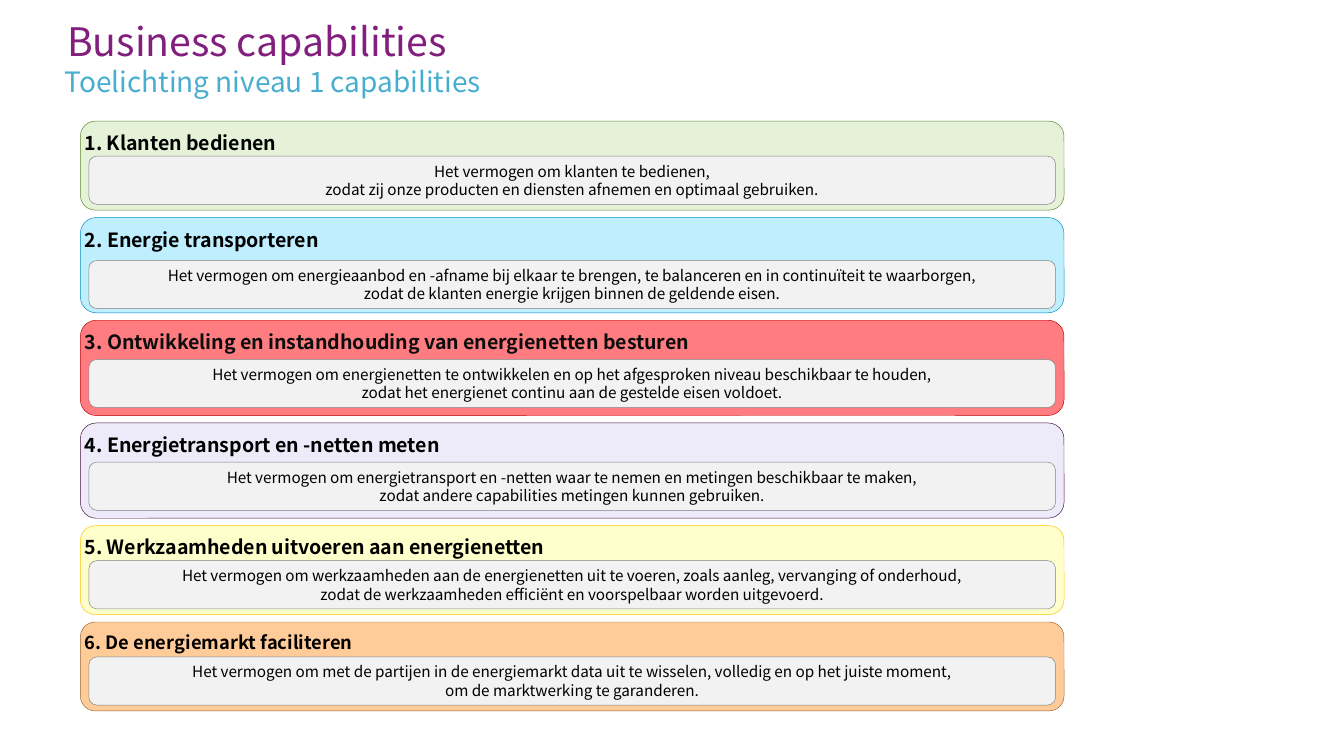
"""Build the slide that explains the level 1 business capabilities."""
import pptx
import pptx.dml.color
import pptx.enum.shapes
import pptx.enum.text
import pptx.util

Cm, Pt = pptx.util.Cm, pptx.util.Pt
RGBColor = pptx.dml.color.RGBColor
Align, Anchor = pptx.enum.text.PP_ALIGN, pptx.enum.text.MSO_ANCHOR

BLACK, INK = RGBColor(0x00, 0x00, 0x00), RGBColor(0x0D, 0x0D, 0x0D)
PURPLE, BLUE = RGBColor(0x82, 0x1E, 0x7D), RGBColor(0x48, 0xAE, 0xD0)
PALE, GREY = RGBColor(0xF2, 0xF2, 0xF2), RGBColor(0x80, 0x80, 0x80)
FONT = "Noto Sans CJK TC"

TITLE = "Business capabilities"
SUBTITLE = "Toelichting niveau 1 capabilities"
BANDS = [
    {"head": "1. Klanten bedienen", "size": 10.5, "ink": BLACK,
     "fill": RGBColor(0xE5, 0xF2, 0xD7), "line": RGBColor(0x5E, 0x87, 0x2D),
     "high": 1.68, "drop": 0.66,
     "body": ["Het vermogen om klanten te bedienen,",
              "zodat zij onze producten en diensten afnemen en optimaal gebruiken."]},
    {"head": "2. Energie transporteren", "size": 10.5, "ink": BLACK,
     "fill": RGBColor(0xBF, 0xEE, 0xFF), "line": RGBColor(0x00, 0x8C, 0xBE),
     "high": 1.8, "drop": 0.81,
     "body": ["Het vermogen om energieaanbod en -afname bij elkaar te brengen, "
              "te balanceren en in continuïteit te waarborgen,",
              "zodat de klanten energie krijgen binnen de geldende eisen."]},
    {"head": "3. Ontwikkeling en instandhouding van energienetten besturen",
     "size": 10.5, "ink": INK,
     "fill": RGBColor(0xFF, 0x7C, 0x80), "line": RGBColor(0xC0, 0x00, 0x00),
     "high": 1.8, "drop": 0.74,
     "body": ["Het vermogen om energienetten te ontwikkelen en op het "
              "afgesproken niveau beschikbaar te houden,",
              "zodat het energienet continu aan de gestelde eisen voldoet."]},
    {"head": "4. Energietransport en -netten meten", "size": 10.5, "ink": BLACK,
     "fill": RGBColor(0xED, 0xEB, 0xF9), "line": RGBColor(0x41, 0x0F, 0x3E),
     "high": 1.8, "drop": 0.74,
     "body": ["Het vermogen om energietransport en -netten waar te nemen en "
              "metingen beschikbaar te maken,",
              "zodat andere capabilities metingen kunnen gebruiken."]},
    {"head": "5. Werkzaamheden uitvoeren aan energienetten", "size": 10.5, "ink": BLACK,
     "fill": RGBColor(0xFF, 0xFF, 0xCC), "line": RGBColor(0xFF, 0xC0, 0x00),
     "high": 1.68, "drop": 0.66,
     "body": ["Het vermogen om werkzaamheden aan de energienetten uit te voeren, "
              "zoals aanleg, vervanging of onderhoud,",
              "zodat de werkzaamheden efficiënt en voorspelbaar worden uitgevoerd."]},
    {"head": "6. De energiemarkt faciliteren", "size": 9.8, "ink": BLACK,
     "fill": RGBColor(0xFF, 0xCC, 0x99), "line": RGBColor(0x99, 0x66, 0x33),
     "high": 1.68, "drop": 0.66,
     "body": ["Het vermogen om met de partijen in de energiemarkt data uit te "
              "wisselen, volledig en op het juiste moment,",
              "om de marktwerking te garanderen."]},
]

TOP, GAP = 2.29, 0.14
LEFT, WIDE = 1.52, 18.59
INSET, INNER = 0.16, 0.91


def apply(item, values):
    """Set each named value on an object."""
    for name, value in values.items():
        setattr(item, name, value)


def write(shape, lines, size, ink, frame, para, bold=False):
    """Fill a shape with formatted paragraphs."""
    text = shape.text_frame
    text.text = "\n".join(lines)
    apply(text, {"word_wrap": True, "auto_size": pptx.enum.text.MSO_AUTO_SIZE.NONE,
                 "vertical_anchor": Anchor.TOP, **frame})
    for line in text.paragraphs:
        apply(line, {"alignment": Align.LEFT, **para})
        apply(line.font, {"name": FONT, "size": Pt(size), "bold": bold})
        line.font.color.rgb = ink


def margins(side, edge):
    """Give the margins of a text frame."""
    return {"margin_left": Cm(side), "margin_right": Cm(side),
            "margin_top": Cm(edge), "margin_bottom": Cm(edge)}


def panel(slide, box, fill, line):
    """Add a rounded panel."""
    kind = pptx.enum.shapes.MSO_SHAPE.ROUNDED_RECTANGLE
    shape = slide.shapes.add_shape(kind, *map(Cm, box))
    shape.shadow.inherit = False
    shape.fill.solid()
    shape.fill.fore_color.rgb = fill
    shape.line.color.rgb = line
    shape.line.width = Pt(0.25)
    return shape


def main():
    """Lay out the slide and save it."""
    deck = pptx.Presentation()
    apply(deck, {"slide_width": Cm(25.4), "slide_height": Cm(14.28)})
    slide = deck.slides.add_slide(deck.slide_layouts[5])

    title = slide.shapes.title
    apply(title, {"left": Cm(1.27), "top": Cm(0.23), "width": Cm(18.49), "height": Cm(0.99)})
    write(title, [TITLE], 21, PURPLE, margins(0, 0), {"line_spacing": Pt(28)})
    under = slide.shapes.add_textbox(Cm(1.22), Cm(1.09), Cm(19.18), Cm(0.56))
    write(under, [SUBTITLE], 15, BLUE, margins(0, 0), {"line_spacing": 1.2})

    top = TOP
    for band in BANDS:
        outer = panel(slide, (LEFT, top, WIDE, band["high"]), band["fill"], band["line"])
        write(outer, [band["head"]], band["size"], band["ink"], margins(0, 0.1), {}, True)
        box = (LEFT + INSET, top + band["drop"], WIDE - 2 * INSET, INNER)
        inner = panel(slide, box, PALE, GREY)
        write(inner, band["body"], 8.2, BLACK,
              {**margins(0.25, 0.13), "vertical_anchor": Anchor.MIDDLE},
              {"alignment": Align.CENTER, "line_spacing": Pt(9.9)})
        top += band["high"] + GAP

    deck.save("out.pptx")


if __name__ == "__main__":
    main()
